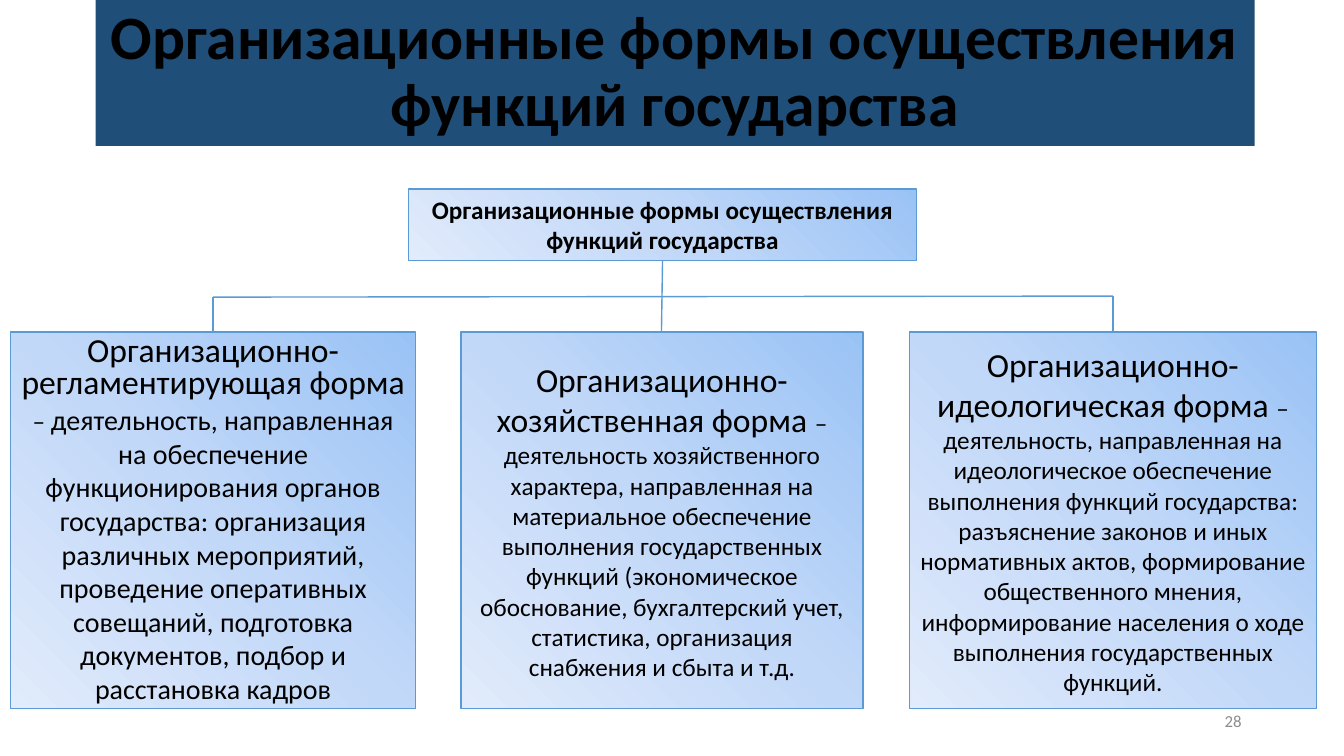
import dataclasses
import typing

import lxml.etree
import pptx
import pptx.dml.color
import pptx.enum.shapes
import pptx.enum.text
import pptx.oxml.ns
import pptx.util

PX = 9525  # EMU per px, 96 px to the inch
FONT = "Calibri"
BLUE = "5B9BD5"
STOPS = (("9AC3F5", 0), ("C2D8F8", 50), ("E1EBFB", 100))
HEADING = "Организационные формы осуществления функций государства"
BOX_TOP, BOX_HEIGHT = 316, 359


@dataclasses.dataclass
class Run:
    text: str
    size: int
    bold: bool = False
    color: str = "000000"


@dataclasses.dataclass
class Box:
    x: int
    y: int
    w: int
    h: int
    runs: list[Run]
    spacing: typing.Any = None


@dataclasses.dataclass
class Line:
    x1: int
    y1: int
    x2: int
    y2: int


BOXES = [
    Box(389, 180, 484, 68, [Run(HEADING, 18, True)]),
    Box(10, BOX_TOP, 386, BOX_HEIGHT, [
        Run("Организационно-регламентирующая форма", 24),
        Run(" ", 28),
        Run("– ", 18),
        Run("деятельность, направленная на обеспечение функционирования "
            "органов государства: организация различных мероприятий, "
            "проведение оперативных совещаний, подготовка документов, "
            "подбор и расстановка кадров", 20),
    ], pptx.util.Pt(24)),
    Box(439, BOX_TOP, 383, BOX_HEIGHT, [
        Run("Организационно-хозяйственная форма ", 24),
        Run("– деятельность хозяйственного характера, направленная на "
            "материальное обеспечение выполнения государственных функций "
            "(экономическое обоснование, бухгалтерский учет, статистика, "
            "организация снабжения и сбыта и т.д.", 18),
    ]),
    Box(866, BOX_TOP, 388, BOX_HEIGHT, [
        Run("Организационно-идеологическая форма ", 24),
        Run("– деятельность, направленная на идеологическое обеспечение "
            "выполнения функций государства: разъяснение законов и иных "
            "нормативных актов, формирование общественного мнения, "
            "информирование населения о ходе выполнения государственных "
            "функций.", 18),
    ]),
]

LINES = [
    Line(1060, 282, 203, 283),
    Line(203, 283, 203, BOX_TOP),
    Line(631, 248, 630, BOX_TOP),
    Line(1060, BOX_TOP, 1060, 282),
]


def px(*values: int) -> list[int]:
    return [v * PX for v in values]


def rgb(color: str) -> pptx.dml.color.RGBColor:
    return pptx.dml.color.RGBColor.from_string(color)


def write(s: typing.Any, runs: list[Run], align: typing.Any,
          spacing: typing.Any = None) -> None:
    tf = s.text_frame
    tf.word_wrap = True
    tf.auto_size = pptx.enum.text.MSO_AUTO_SIZE.NONE
    tf.vertical_anchor = pptx.enum.text.MSO_ANCHOR.MIDDLE
    p = tf.paragraphs[0]
    p.alignment = align
    p.line_spacing = spacing
    for run in runs:
        r = p.add_run()
        r.text = run.text
        r.font.name = FONT
        r.font.size = pptx.util.Pt(run.size)
        r.font.bold = run.bold
        r.font.color.rgb = rgb(run.color)


def fill_gradient(s: typing.Any) -> None:
    s.fill.gradient()
    s.fill.gradient_angle = 225
    qn = pptx.oxml.ns.qn
    stops = s.fill._fill._gradFill.find(qn("a:gsLst"))
    for stop in list(stops):
        stops.remove(stop)
    for color, percent in STOPS:
        gs = lxml.etree.SubElement(stops, qn("a:gs"), pos=str(percent * 1000))
        lxml.etree.SubElement(gs, qn("a:srgbClr"), val=color)


def style_line(line: typing.Any) -> None:
    line.color.rgb = rgb(BLUE)
    line.width = pptx.util.Pt(1)


def add_box(slide: typing.Any, box: Box) -> None:
    s = slide.shapes.add_shape(pptx.enum.shapes.MSO_SHAPE.RECTANGLE,
                               *px(box.x, box.y, box.w, box.h))
    s.shadow.inherit = False
    fill_gradient(s)
    style_line(s.line)
    write(s, box.runs, pptx.enum.text.PP_ALIGN.CENTER, box.spacing)


def add_line(slide: typing.Any, line: Line) -> None:
    s = slide.shapes.add_connector(pptx.enum.shapes.MSO_CONNECTOR.STRAIGHT,
                                   *px(line.x1, line.y1, line.x2, line.y2))
    style_line(s.line)
    lxml.etree.SubElement(s._element.spPr, pptx.oxml.ns.qn("a:effectLst"))


def main() -> None:
    prs = pptx.Presentation()
    prs.slide_width, prs.slide_height = px(1280, 720)
    slide = prs.slides.add_slide(prs.slide_layouts[5])

    # Title band
    title = slide.shapes.title
    title.left, title.top, title.width, title.height = px(91, 0, 1104, 139)
    title.fill.solid()
    title.fill.fore_color.rgb = rgb("1F4E79")
    write(title, [Run(HEADING, 44, True)],
          pptx.enum.text.PP_ALIGN.CENTER, 0.9)

    # Diagram
    for box in BOXES:
        add_box(slide, box)
    for line in LINES:
        add_line(slide, line)

    # Slide number
    number = slide.shapes.add_textbox(*px(904, 667, 288, 38))
    write(number, [Run("28", 12, color="8C8C8C")],
          pptx.enum.text.PP_ALIGN.RIGHT)

    prs.save("out.pptx")


if __name__ == "__main__":
    main()
